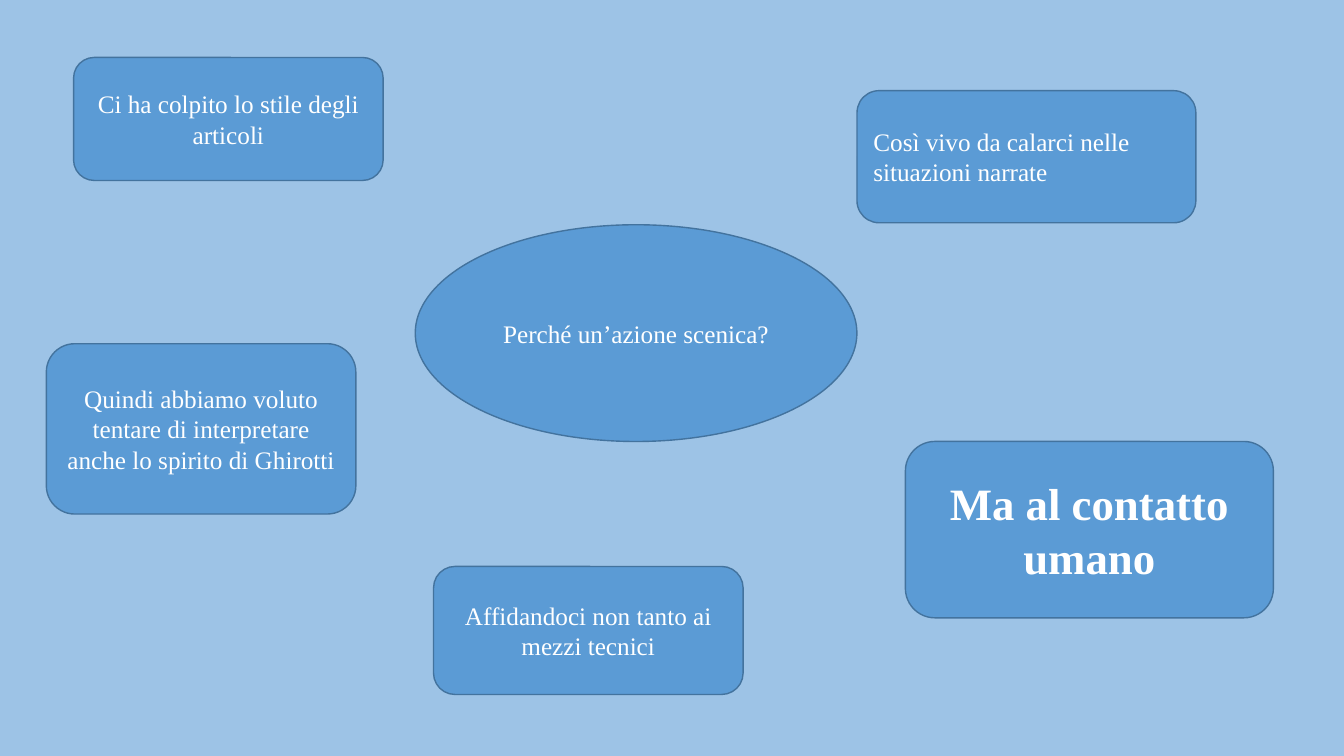
from pptx import Presentation
from pptx import util as u
from pptx.dml.color import RGBColor
from pptx.enum import shapes, text

SKY = RGBColor(0x9D, 0xC3, 0xE6)
BLUE = RGBColor(0x5B, 0x9B, 0xD5)
OUTLINE = RGBColor(0x43, 0x73, 0x9E)
WHITE = RGBColor(0xFF, 0xFF, 0xFF)

BLANK_LAYOUT = 6
NARROW = 23.03  # shared width of the three smaller answers


class ConceptMap:
    """Draws bubbles placed in percent of the slide's width and height."""

    font_name = "Times New Roman"

    def __init__(self, deck):
        self.width, self.height = deck.slide_width, deck.slide_height
        self.slide = deck.slides.add_slide(deck.slide_layouts[BLANK_LAYOUT])
        background = self.slide.background.fill
        background.solid()
        background.fore_color.rgb = SKY

    def bubble(self, kind, place, wording, size=18, bold=False,
               align=text.PP_ALIGN.CENTER):
        left, top, width, height = place
        bubble = self.slide.shapes.add_shape(
            kind,
            round(self.width * left / 100), round(self.height * top / 100),
            round(self.width * width / 100), round(self.height * height / 100))
        bubble.shadow.inherit = False
        bubble.fill.solid()
        bubble.fill.fore_color.rgb = BLUE
        bubble.line.color.rgb = OUTLINE
        bubble.line.width = u.Pt(1)

        frame = bubble.text_frame
        frame.word_wrap = True
        frame.vertical_anchor = text.MSO_ANCHOR.MIDDLE
        frame.text = wording
        paragraph = frame.paragraphs[0]
        paragraph.alignment = align
        font = paragraph.runs[0].font
        font.name, font.size, font.bold = self.font_name, u.Pt(size), bold
        font.color.rgb = WHITE

    def question(self, place, wording):
        self.bubble(shapes.MSO_SHAPE.OVAL, place, wording)

    def answer(self, place, wording, **style):
        self.bubble(shapes.MSO_SHAPE.ROUNDED_RECTANGLE, place, wording, **style)


def main():
    deck = Presentation()
    deck.slide_width, deck.slide_height = u.Inches(13.33), u.Inches(7.5)

    concept_map = ConceptMap(deck)
    concept_map.question((30.9, 29.73, 32.86, 28.67), "Perché un’azione scenica?")
    concept_map.answer((5.48, 7.6, NARROW, 16.27),
                       "Ci ha colpito lo stile degli articoli")
    concept_map.answer((63.77, 12, 25.21, 17.47),
                       "Così vivo da calarci nelle situazioni narrate",
                       align=text.PP_ALIGN.LEFT)
    concept_map.answer((3.45, 45.47, NARROW, 22.53),
                       "Quindi abbiamo voluto tentare di interpretare "
                       "anche lo spirito di Ghirotti")
    concept_map.answer((67.37, 58.4, 27.38, 23.33), "Ma al contatto umano",
                       size=32, bold=True)
    concept_map.answer((32.26, 74.93, NARROW, 16.93),
                       "Affidandoci non tanto ai mezzi tecnici")

    deck.save("out.pptx")


if __name__ == "__main__":
    main()
